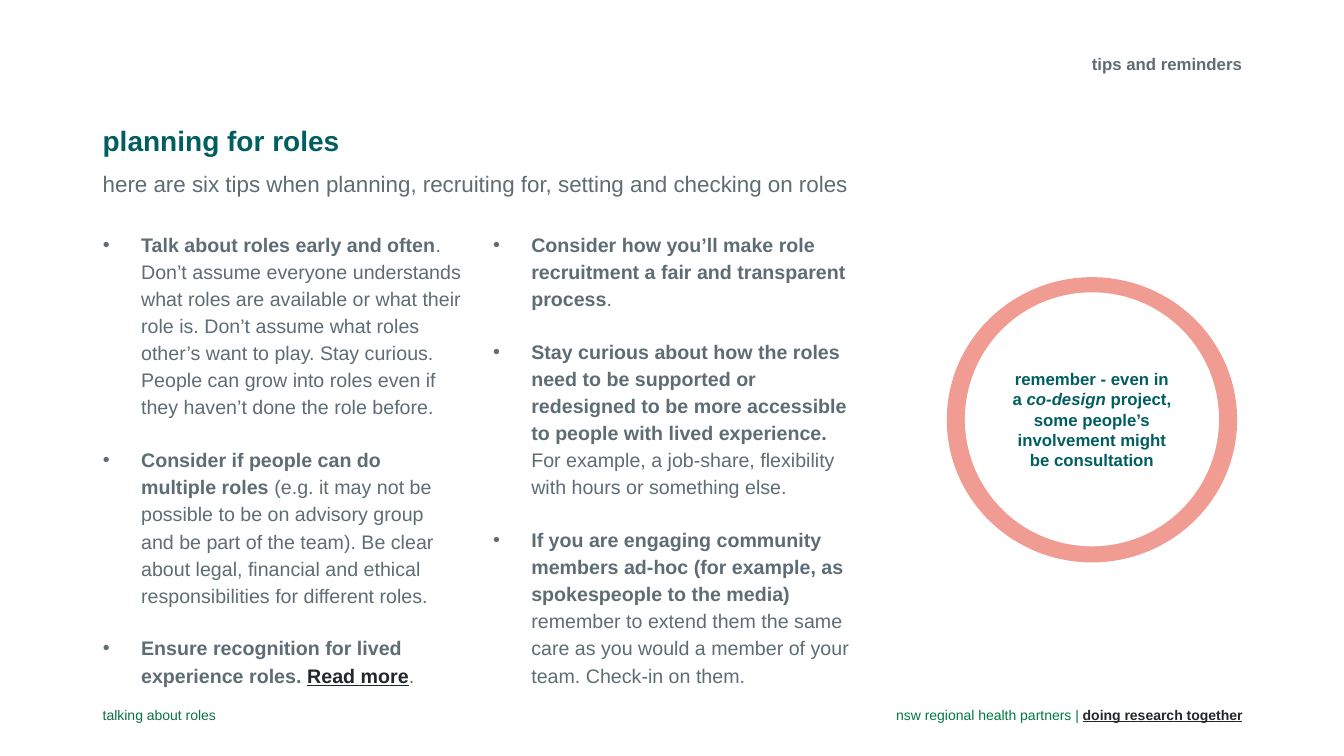
from lxml.etree import SubElement
from pptx import Presentation
from pptx.dml.color import RGBColor
from pptx.enum.shapes import MSO_SHAPE as Shape
from pptx.enum.text import MSO_ANCHOR as Anchor, MSO_AUTO_SIZE as AutoSize, PP_ALIGN as Align
from pptx.oxml.ns import qn
from pptx.util import Inches, Pt

FONT = "Arial"
COLORS = {"grey": "5E6C73", "teal": "015E60", "green": "0B7241", "leaf": "007A41",
          "link": "22272B", "coral": "F19C93", "white": "FFFFFF"}

# Each paragraph is a list of (text, style); style letters: b bold, i italic, l link
TITLE = [("tips and reminders", "b")]
HEADING = [("planning for roles", "b")]
SUBHEADING = [("here are six tips when planning, recruiting for, setting and checking on roles", "")]
TIP_COLUMNS = [
    [
        [("Talk about roles early and often", "b"),
         (". Don’t assume everyone understands what roles are available or what their role is. "
          "Don’t assume what roles other’s want to play. Stay curious. People can grow into "
          "roles even if they haven’t done the role before.", "")],
        [("Consider if people can do multiple roles ", "b"),
         ("(e.g. it may not be possible to be on advisory group and be part of the team). "
          "Be clear about legal, financial and ethical responsibilities for different roles.", "")],
        [("Ensure recognition for lived experience roles. ", "b"), ("Read more", "bl"), (".", "")],
    ],
    [
        [("Consider how you’ll make role recruitment a fair and transparent process", "b"), (".", "")],
        [("Stay curious about how the roles need to be supported or redesigned to be more "
          "accessible to people with lived experience. ", "b"),
         ("For example, a job-share, flexibility with hours or something else.", "")],
        [("If you are engaging community members ad-hoc (for example, as spokespeople "
          "to the media) ", "b"),
         ("remember to extend them the same care as you would a member of your team. "
          "Check-in on them.", "")],
    ],
]
REMINDER = [("remember - even in a ", "b"), ("co-design", "bi"),
            (" project, some people’s involvement might be consultation", "b")]
FOOTER_LEFT = [("talking about roles", "")]
FOOTER_RIGHT = [("nsw regional health partners | ", ""), ("doing research together", "bl")]

LEFT, WIDTH = 0.92, 11.5
INSET, COLUMN_GAP, COLUMN_COUNT = 0.1, 0.31, 3
BULLET_INDENT = 0.38


def rgb(name):
    return RGBColor.from_string(COLORS[name])


def write(para, spans, size, color, spacing=1.0, align=Align.LEFT):
    para.alignment = align
    para.line_spacing = spacing
    for text, style in spans:
        span = para.add_run()
        span.text = text
        font = span.font
        font.name, font.size = FONT, Pt(size)
        font.bold, font.italic = "b" in style, "i" in style
        font.underline = "l" in style
        font.color.rgb = rgb("link" if "l" in style else color)


def add_bullet(para):
    props = para._p.get_or_add_pPr()
    props.set("marL", str(Inches(BULLET_INDENT)))
    props.set("indent", str(-Inches(BULLET_INDENT)))
    SubElement(props, qn("a:buFont"), typeface=FONT)
    SubElement(props, qn("a:buChar"), char="•")


def add_box(page, left, top, width, height, anchor=Anchor.MIDDLE):
    box = page.shapes.add_textbox(Inches(left), Inches(top), Inches(width), Inches(height))
    frame = box.text_frame
    frame.word_wrap = True
    frame.vertical_anchor = anchor
    return frame


def add_circle(page, left, top, width, height, color):
    circle = page.shapes.add_shape(Shape.OVAL, Inches(left), Inches(top),
                                   Inches(width), Inches(height))
    circle.shadow.inherit = False
    circle.fill.solid()
    circle.fill.fore_color.rgb = rgb(color)
    circle.line.fill.background()
    return circle


def add_title(page):
    title = page.shapes.title
    title.left, title.top = Inches(3.18), Inches(0.4)
    title.width, title.height = Inches(9.24), Inches(0.49)
    frame = title.text_frame
    frame.auto_size = AutoSize.NONE
    frame.vertical_anchor = Anchor.MIDDLE
    write(frame.paragraphs[0], TITLE, 12, "grey", 0.9, Align.RIGHT)


def add_tips(page):
    column_width = (WIDTH - 2 * INSET - (COLUMN_COUNT - 1) * COLUMN_GAP) / COLUMN_COUNT
    for number, tips in enumerate(TIP_COLUMNS):
        left = LEFT + INSET + number * (column_width + COLUMN_GAP)
        frame = add_box(page, left, 2.23, column_width, 4.61, Anchor.TOP)
        frame.margin_left = frame.margin_right = 0
        for index, tip in enumerate(tips):
            para = frame.add_paragraph() if index else frame.paragraphs[0]
            add_bullet(para)
            if index:
                para.space_before = Pt(18.5)
            write(para, tip, 14, "grey", 1.15)


def add_reminder(page):
    add_circle(page, 9.39, 2.75, 2.88, 2.83, "coral")
    frame = add_circle(page, 9.57, 2.9, 2.52, 2.52, "white").text_frame
    frame.word_wrap = True
    frame.vertical_anchor = Anchor.MIDDLE
    frame.margin_left = frame.margin_right = Inches(0.08)
    write(frame.paragraphs[0], REMINDER, 12, "teal", align=Align.CENTER)


def main():
    deck = Presentation()
    deck.slide_width, deck.slide_height = Inches(13.33), Inches(7.5)
    page = deck.slides.add_slide(deck.slide_layouts[5])

    add_title(page)
    heading = add_box(page, LEFT, 1.1, WIDTH, 0.95)
    write(heading.paragraphs[0], HEADING, 20, "teal", 1.1)
    write(heading.add_paragraph(), SUBHEADING, 16, "grey", 1.5)
    add_tips(page)
    add_reminder(page)

    half = WIDTH / 2
    footers = [(FOOTER_LEFT, "green", Align.LEFT), (FOOTER_RIGHT, "leaf", Align.RIGHT)]
    for number, (spans, color, align) in enumerate(footers):
        frame = add_box(page, LEFT + number * half, 6.92, half, 0.36)
        write(frame.paragraphs[0], spans, 10, color, 0.9, align)

    deck.save("out.pptx")


if __name__ == "__main__":
    main()
